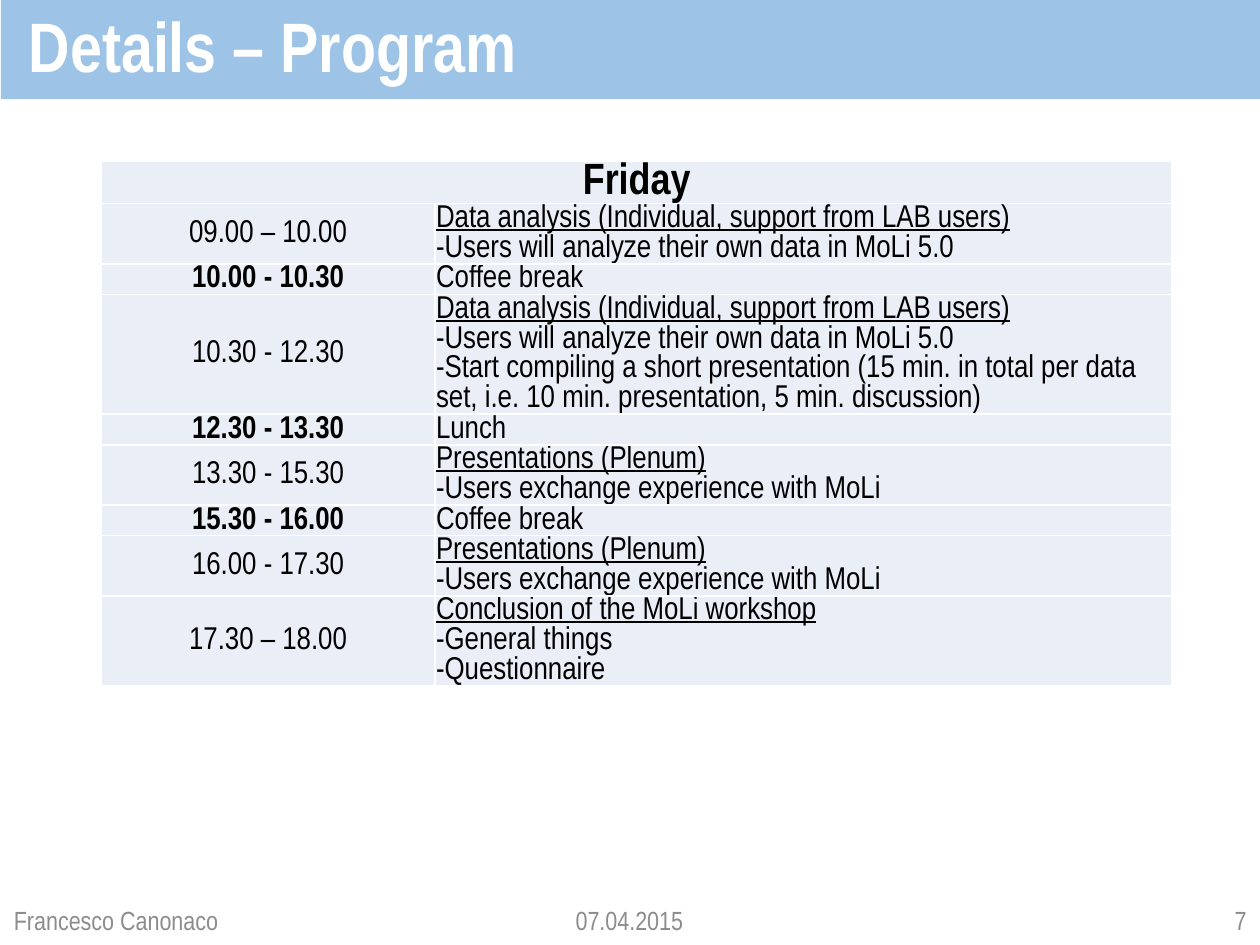
from pptx import Presentation
from pptx.dml.color import RGBColor
from pptx.enum.text import MSO_ANCHOR, MSO_AUTO_SIZE, PP_ALIGN
from pptx.util import Cm, Pt

FONT = "Arial Narrow"
COLORS = {"band": "9DC3E6", "cell": "EAEFF7", "title": "FFFFFF", "text": "000000", "footer": "8C8C8C"}

TITLE = "Details – Program"
DAY = "Friday"
ANALYSIS = [
    "Data analysis (Individual, support from LAB users)",
    "-Users will\u00a0analyze their own data in MoLi 5.0",
]
PRESENTATIONS = ["Presentations (Plenum)", "-Users exchange experience with MoLi"]
PROGRAM = [
    ("09.00 – 10.00", ANALYSIS),
    ("10.00 - 10.30", ["Coffee break"]),
    ("10.30 - 12.30", ANALYSIS + [
        "-Start compiling a short presentation (15 min. in total per data set, "
        "i.e. 10 min. presentation, 5 min. discussion)"]),
    ("12.30 - 13.30", ["Lunch"]),
    ("13.30 - 15.30", PRESENTATIONS),
    ("15.30 - 16.00", ["Coffee break"]),
    ("16.00 - 17.30", PRESENTATIONS),
    ("17.30 – 18.00", ["Conclusion of the MoLi workshop", "-General things", "-Questionnaire"]),
]
FOOTERS = [
    ("07.04.2015", 9.83, 5.72, PP_ALIGN.CENTER),
    ("Francesco Canonaco", 0.03, 5.03, PP_ALIGN.LEFT),
    ("7", 19.66, 5.72, PP_ALIGN.RIGHT),
]
COLUMN_WIDTHS = [6.73, 14.86]
ROW_HEIGHT = 0.33


def color(name):
    return RGBColor.from_string(COLORS[name])


def format_paragraph(paragraph, size, color_name, alignment=PP_ALIGN.LEFT, bold=False, underline=False):
    paragraph.alignment = alignment
    for run in paragraph.runs:
        run.font.name = FONT
        run.font.size = Pt(size)
        run.font.color.rgb = color(color_name)
        run.font.bold = bold
        run.font.underline = underline


def set_margins(target, horizontal, top, bottom):
    target.margin_left = target.margin_right = Cm(horizontal)
    target.margin_top, target.margin_bottom = Cm(top), Cm(bottom)


def add_title(slide):
    title = slide.shapes.title
    title.left, title.top, title.width, title.height = Cm(0.02), Cm(0), Cm(25.4), Cm(2)
    title.fill.solid()
    title.fill.fore_color.rgb = color("band")
    frame = title.text_frame
    frame.text = TITLE
    frame.auto_size = MSO_AUTO_SIZE.NONE
    frame.vertical_anchor = MSO_ANCHOR.MIDDLE
    set_margins(frame, 0.18, 0.1, 0.1)
    paragraph = frame.paragraphs[0]
    paragraph.line_spacing = 0.9
    properties = paragraph._p.get_or_add_pPr()
    properties.set("marL", str(Cm(0.38)))
    properties.set("indent", "0")
    format_paragraph(paragraph, 40, "title", bold=True)


def fill_cell(cell, lines, size=18, alignment=PP_ALIGN.LEFT, bold=False):
    cell.text = "\n".join(lines)
    cell.vertical_anchor = MSO_ANCHOR.MIDDLE
    set_margins(cell, 0.02, 0.02, 0)
    cell.fill.solid()
    cell.fill.fore_color.rgb = color("cell")
    for index, paragraph in enumerate(cell.text_frame.paragraphs):
        heading = index == 0 and len(lines) > 1
        format_paragraph(paragraph, size, "text", alignment, bold, heading)


def add_program(slide):
    row_count = len(PROGRAM) + 1
    table = slide.shapes.add_table(
        row_count, len(COLUMN_WIDTHS), Cm(2.04), Cm(3.26),
        Cm(sum(COLUMN_WIDTHS)), Cm(ROW_HEIGHT * row_count)).table
    table.first_row = False
    table.horz_banding = False
    for column, width in zip(table.columns, COLUMN_WIDTHS):
        column.width = Cm(width)
    table.cell(0, 0).merge(table.cell(0, 1))
    fill_cell(table.cell(0, 0), [DAY], 25, PP_ALIGN.CENTER, True)
    for row, (time, lines) in enumerate(PROGRAM, start=1):
        is_break = len(lines) == 1
        fill_cell(table.cell(row, 0), [time], alignment=PP_ALIGN.CENTER, bold=is_break)
        fill_cell(table.cell(row, 1), lines)


def add_footers(slide):
    for text, left, width, alignment in FOOTERS:
        frame = slide.shapes.add_textbox(Cm(left), Cm(18.03), Cm(width), Cm(1.02)).text_frame
        frame.text = text
        frame.word_wrap = True
        frame.vertical_anchor = MSO_ANCHOR.MIDDLE
        format_paragraph(frame.paragraphs[0], 15, "footer", alignment)


def main():
    presentation = Presentation()
    presentation.slide_width, presentation.slide_height = Cm(25.4), Cm(19.05)
    slide = presentation.slides.add_slide(presentation.slide_layouts[5])
    add_title(slide)
    add_program(slide)
    add_footers(slide)
    presentation.save("out.pptx")


if __name__ == "__main__":
    main()
